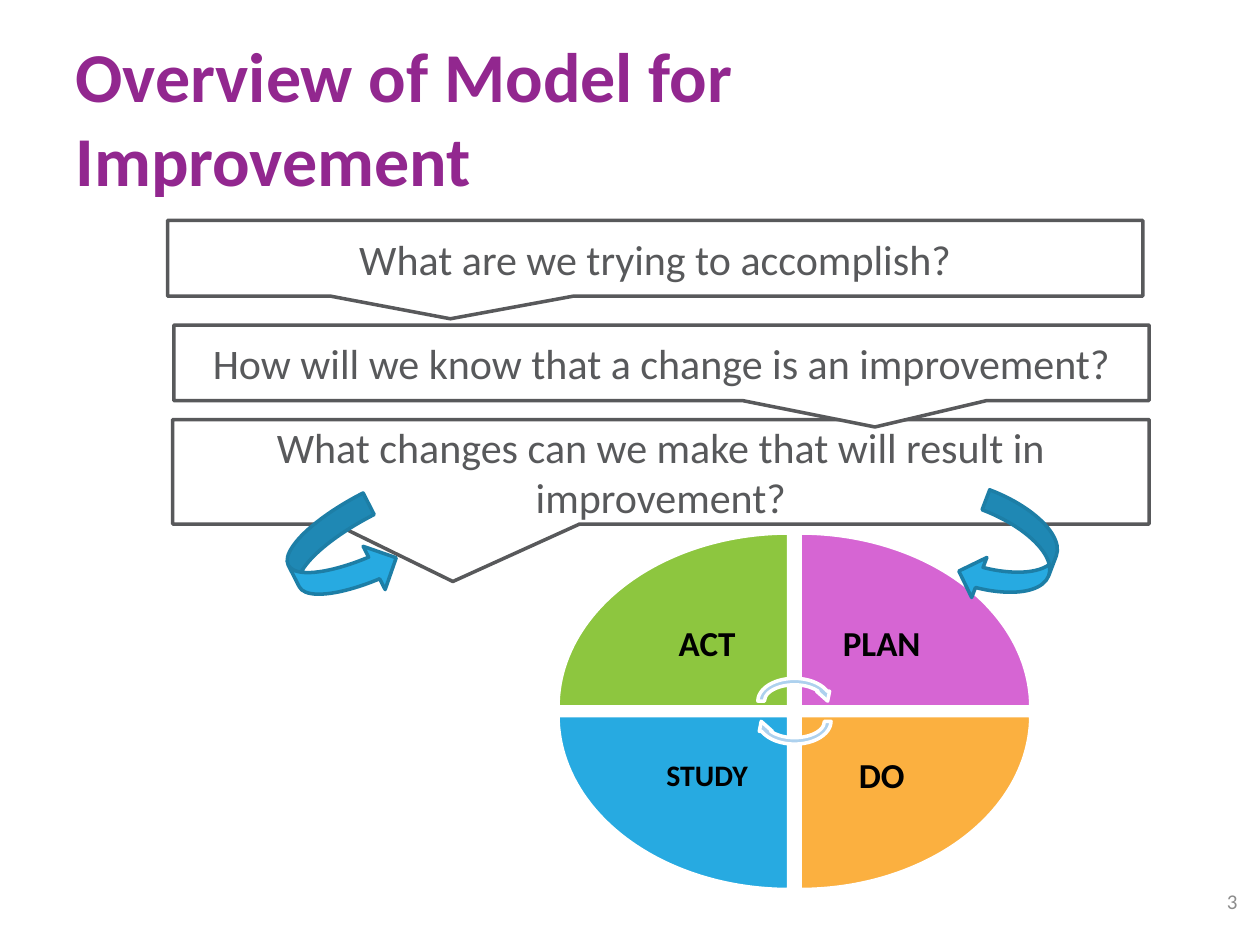
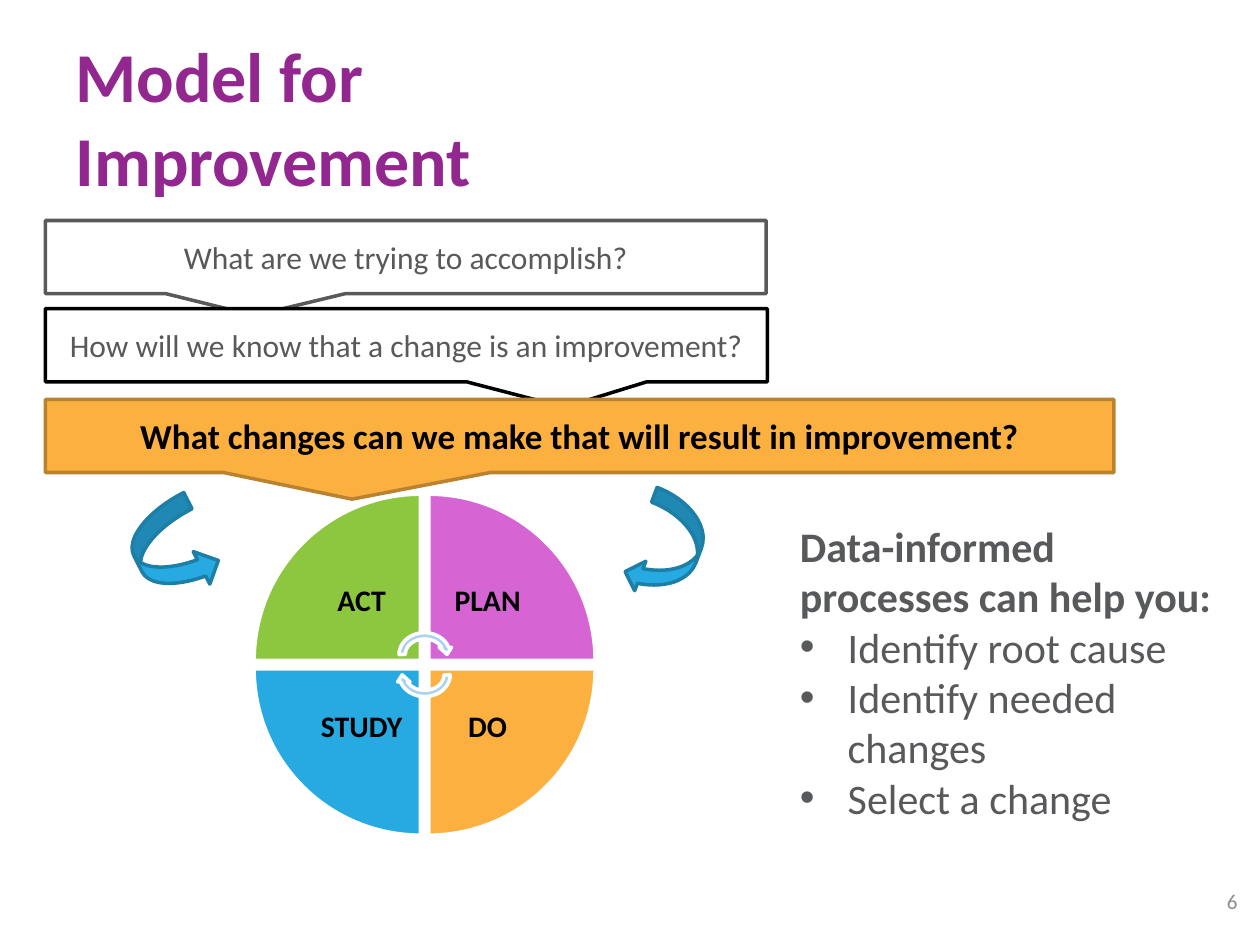
from dataclasses import dataclass
from math import sqrt

from lxml.etree import SubElement
from pptx import Presentation
from pptx.dml.color import RGBColor
from pptx.enum.shapes import MSO_SHAPE
from pptx.enum.text import MSO_ANCHOR, PP_ALIGN
from pptx.oxml.ns import qn
from pptx.util import Emu, Inches, Pt

COLUMNS, ROWS = 100, 75
TITLE_ONLY = 5


@dataclass(frozen=True)
class Theme:
    font: str = "Calibri"
    purple: str = "92278F"
    green: str = "8DC63F"
    pink: str = "D665D3"
    orange: str = "FBB040"
    dark_orange: str = "BA822F"
    blue: str = "27AAE1"
    dark_blue: str = "1D7EA6"
    pale_blue: str = "ADD1EE"
    grey: str = "58595B"
    light_grey: str = "8C8C8C"
    black: str = "000000"
    white: str = "FFFFFF"
    title_size: int = 40
    large: int = 24
    medium: int = 20
    normal: int = 18
    small: int = 17
    page_size: int = 12
    line_width: int = 2


class Deck:
    """Holds the theme and the slide in progress; boxes are in grid columns and rows."""

    def __init__(self, theme):
        self.theme = theme
        self.presentation = Presentation()
        self.presentation.slide_width = Inches(10)
        self.presentation.slide_height = Inches(7.5)
        self.column = self.presentation.slide_width / COLUMNS
        self.row = self.presentation.slide_height / ROWS
        self.slide = None

    def grid(self, left, top, width, height):
        return (Emu(round(left * self.column)), Emu(round(top * self.row)),
                Emu(round(width * self.column)), Emu(round(height * self.row)))

    def start_slide(self, title, page):
        theme = self.theme
        layout = self.presentation.slide_layouts[TITLE_ONLY]
        self.slide = self.presentation.slides.add_slide(layout)
        heading = self.slide.shapes.title
        heading.left, heading.top, heading.width, heading.height = self.grid(5, 3, 54.2, 12.5)
        self.fill_frame(heading.text_frame, title, theme.title_size, theme.purple,
                        bold=True, align=PP_ALIGN.LEFT)
        self.text((94.2, 69.5, 5, 4), page, theme.page_size, theme.light_grey,
                  align=PP_ALIGN.RIGHT)

    def add_run(self, paragraph, words, size, color, bold=False):
        run = paragraph.add_run()
        run.text = words
        font = run.font
        font.name, font.size, font.bold = self.theme.font, Pt(size), bold
        font.color.rgb = RGBColor.from_string(color)

    def fill_frame(self, frame, words, size, color, bold=False, align=PP_ALIGN.CENTER,
                   anchor=MSO_ANCHOR.MIDDLE):
        frame.word_wrap = True
        frame.vertical_anchor = anchor
        paragraph = frame.paragraphs[0]
        paragraph.alignment = align
        self.add_run(paragraph, words, size, color, bold)

    def text(self, box, words, size, color, **style):
        frame = self.slide.shapes.add_textbox(*self.grid(*box)).text_frame
        self.fill_frame(frame, words, size, color, **style)
        return frame

    def shape(self, kind, box, fill, line, rotation=0):
        shape = self.slide.shapes.add_shape(kind, *self.grid(*box))
        shape.shadow.inherit = False
        shape.fill.solid()
        shape.fill.fore_color.rgb = RGBColor.from_string(fill)
        shape.line.color.rgb = RGBColor.from_string(line)
        shape.line.width = Pt(self.theme.line_width)
        shape.rotation = rotation
        return shape

    def centred_shape(self, kind, center, size, fill, line, rotation=0):
        (x, y), (width, height) = center, size
        box = (x - width / 2, y - height / 2, width, height)
        return self.shape(kind, box, fill, line, rotation)

    def callout(self, box, tip, question, size, fill=None, line=None, color=None, bold=False):
        """Question box whose pointer ends at tip, in shares of the box from its centre."""
        theme = self.theme
        callout = self.shape(MSO_SHAPE.RECTANGULAR_CALLOUT, box,
                             fill or theme.white, line or theme.grey)
        callout.adjustments[0], callout.adjustments[1] = tip
        self.fill_frame(callout.text_frame, question, size, color or theme.grey, bold)

    def curved_arrows(self, left_box, right_box):
        theme = self.theme
        for kind, box, rotation in ((MSO_SHAPE.CURVED_RIGHT_ARROW, left_box, 333),
                                    (MSO_SHAPE.CURVED_LEFT_ARROW, right_box, 20.8)):
            self.shape(kind, box, theme.blue, theme.dark_blue, rotation)

    def pdsa_cycle(self, center, wedge, label_sizes):
        """Four wedges around center, clockwise from ACT, with two turning arrows."""
        theme = self.theme
        x, y = center
        width, height = wedge
        gap = 0.05
        label_width, label_height = width * sqrt(0.5), height * sqrt(0.5)
        stages = (("ACT", theme.green, -1, -1), ("PLAN", theme.pink, 1, -1),
                  ("DO", theme.orange, 1, 1), ("STUDY", theme.blue, -1, 1))
        for turn, ((stage, fill, across, down), size) in enumerate(zip(stages, label_sizes)):
            middle = (x + across * width * (1 + gap) / 2, y + down * height * (1 + gap) / 2)
            extent = (height, width) if turn % 2 else wedge
            self.centred_shape(MSO_SHAPE.PIE_WEDGE, middle, extent, fill, theme.white, 90 * turn)

            label_x = x + across * (width * gap + label_width) / 2
            label_y = y + down * (height * gap + label_height) / 2
            box = (label_x - label_width / 2, label_y - label_height / 2,
                   label_width, label_height)
            frame = self.text(box, stage, size, theme.black, bold=True)
            frame.paragraphs[0].line_spacing = 0.9
            inset = Pt(size * 0.57)
            frame.margin_left = frame.margin_right = inset
            frame.margin_top = frame.margin_bottom = inset

        for shift, rotation in ((-0.8, 0), (0.8, 180)):
            self.centred_shape(MSO_SHAPE.CIRCULAR_ARROW, (x, y + shift),
                               (width * 0.345, height * 0.3),
                               theme.pale_blue, theme.white, rotation)

    def bullet_list(self, box, heading, items):
        theme = self.theme
        frame = self.text(box, heading, theme.large, theme.grey, bold=True,
                          align=PP_ALIGN.LEFT, anchor=MSO_ANCHOR.TOP)
        indent = Inches(0.38)
        for item in items:
            paragraph = frame.add_paragraph()
            properties = paragraph._p.get_or_add_pPr()
            properties.set("marL", str(indent))
            properties.set("indent", str(-indent))
            SubElement(properties, qn("a:buFont")).set("typeface", "Arial")
            SubElement(properties, qn("a:buChar")).set("char", "•")
            self.add_run(paragraph, item, theme.large, theme.grey)


AIM = "What are we trying to accomplish?"
MEASURE = "How will we know that a change is an improvement?"
CHANGE = "What changes can we make that will result in improvement?"


def overview_slide(deck):
    theme = deck.theme
    deck.start_slide("Overview of Model for Improvement", "3")
    deck.pdsa_cycle((63.05, 56.45), (18.3, 13.8),
                    (theme.medium, theme.medium, theme.medium, theme.small))
    deck.callout((13.7, 33.3, 77.5, 8.3), (-0.213, 1.049), CHANGE, theme.large)
    deck.callout((13.8, 25.8, 77.4, 6), (0.219, 0.849), MEASURE, theme.large)
    deck.callout((13.3, 17.5, 77.4, 6), (-0.21, 0.801), AIM, theme.large)
    deck.curved_arrows((23.1, 40.5, 7.9, 7.7), (76.8, 39.8, 6.8, 8.6))


def change_slide(deck):
    theme = deck.theme
    deck.start_slide("Model for Improvement", "6")
    deck.callout((3.6, 17.5, 57.2, 5.8), (-0.21, 0.801), AIM, theme.normal)
    deck.callout((3.6, 24.5, 57.3, 5.8), (0.219, 0.849), MEASURE, theme.normal,
                 line=theme.black)
    deck.callout((3.6, 31.7, 84.8, 5.8), (-0.213, 0.865), CHANGE, theme.medium,
                 fill=theme.orange, line=theme.dark_orange, color=theme.black, bold=True)
    deck.curved_arrows((10.8, 40, 5.8, 7.5), (50.5, 39.3, 5, 8.4))
    deck.pdsa_cycle((33.7, 52.75), (13.2, 13.2), (theme.small,) * 4)
    deck.bullet_list((62.5, 40.8, 35, 25.2), "Data-informed processes can help you:",
                     ("Identify root cause", "Identify needed changes", "Select a change"))


def main():
    deck = Deck(Theme())
    overview_slide(deck)
    change_slide(deck)
    deck.presentation.save("out.pptx")


if __name__ == "__main__":
    main()
